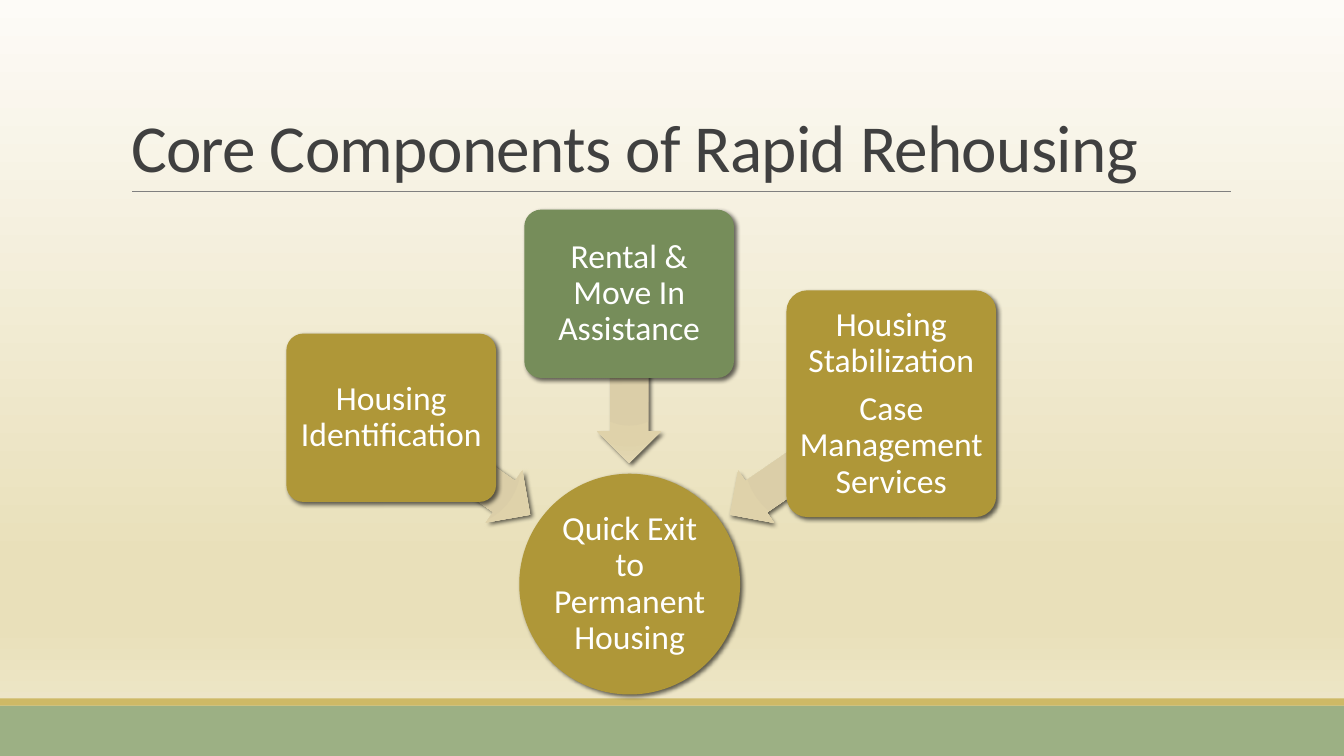
from lxml import etree
from pptx import Presentation
from pptx.dml.color import RGBColor
from pptx.enum.shapes import MSO_CONNECTOR, MSO_SHAPE
from pptx.enum.text import MSO_ANCHOR, MSO_AUTO_SIZE, PP_ALIGN
from pptx.oxml import parse_xml
from pptx.oxml.ns import nsdecls, qn
from pptx.util import Pt

PX = 9144  # 100 px to the inch
GOLD = RGBColor(0xAF, 0x97, 0x38)
GREEN = RGBColor(0x76, 0x8D, 0x5A)
SAGE = RGBColor(0x9C, 0xB0, 0x84)
YELLOW = RGBColor(0xCE, 0xB9, 0x66)
GREY = RGBColor(0x80, 0x80, 0x80)
DARK = RGBColor(0x40, 0x40, 0x40)
WHITE = RGBColor(0xFF, 0xFF, 0xFF)
PAGE_STOPS = [(0, "FDFBF7"), (74, "E9E0BA"), (83, "E9E0BA"), (100, "F0EAD1")]
ARROW_STOPS = [(0, "DACDA6"), (34, "DBCEA8"), (70, "DFD2AA"), (100, "E5DAB6")]
LINEAR = '<a:lin ang="5400000" scaled="0"/>'
RADIAL = ('<a:path path="circle"><a:fillToRect l="100000" t="100000" '
          'r="100000" b="100000"/></a:path>')


def set_gradient(fill, parent, stops, direction):
    fill.gradient()
    old = parent.find(".//" + qn("a:gradFill"))
    marks = "".join(f'<a:gs pos="{place * 1000}"><a:srgbClr val="{color}"/></a:gs>'
                    for place, color in stops)
    old.getparent().replace(old, parse_xml(
        f'<a:gradFill {nsdecls("a")} rotWithShape="1"><a:gsLst>{marks}</a:gsLst>'
        f'{direction}</a:gradFill>'))


def add_block(kind, bounds, color=None, shadow=True):
    block = page.shapes.add_shape(kind, *(n * PX for n in bounds))
    block.shadow.inherit = False
    block.line.fill.background()
    if color is not None:
        block.fill.solid()
        block.fill.fore_color.rgb = color
    else:
        set_gradient(block.fill, block._element.spPr, ARROW_STOPS, RADIAL)
    if shadow:
        effects = block._element.spPr.find(qn("a:effectLst"))
        effects.append(parse_xml(
            f'<a:outerShdw {nsdecls("a")} blurRad="38100" dist="25400" dir="2700000" '
            'rotWithShape="0"><a:srgbClr val="000000"><a:alpha val="60000"/>'
            '</a:srgbClr></a:outerShdw>'))
    return block


deck = Presentation()
deck.slide_width, deck.slide_height = 1333 * PX, 750 * PX
page = deck.slides.add_slide(deck.slide_layouts[5])

# Background, bottom bands and title rule
set_gradient(page.background.fill, page._element, PAGE_STOPS, LINEAR)
add_block(MSO_SHAPE.RECTANGLE, (0, 700, 1333, 50), SAGE, shadow=False)
add_block(MSO_SHAPE.RECTANGLE, (0, 693, 1333, 7), YELLOW, shadow=False)
rule = page.shapes.add_connector(MSO_CONNECTOR.STRAIGHT,
                                 131 * PX, 190 * PX, 1221 * PX, 190 * PX)
rule.line.color.rgb = GREY
rule.line.width = Pt(0.5)
etree.SubElement(rule._element.spPr, qn("a:effectLst"))

# Title
title = page.shapes.title
title.left, title.top, title.width, title.height = (n * PX for n in (120, 31, 1100, 159))
title.text_frame.auto_size = MSO_AUTO_SIZE.NONE
title.text_frame.vertical_anchor = MSO_ANCHOR.BOTTOM
para = title.text_frame.paragraphs[0]
para.alignment = PP_ALIGN.LEFT
para.line_spacing = 0.85
span = para.add_run()
span.text = "Core Components of Rapid Rehousing"
span.font.name = "Calibri"
span.font.size = Pt(48)
span.font.color.rgb = DARK
span.font._element.set("spc", "-50")

# Components: shape, bounds, colour, inset, paragraphs, arrow bounds, arrow rotation
ROUND = MSO_SHAPE.ROUNDED_RECTANGLE
COMPONENTS = [
    (MSO_SHAPE.OVAL, (515, 470, 219, 219), GOLD, 2,
     ["Quick Exit to Permanent Housing"], None, 0),
    (ROUND, (284, 331, 208, 167), GOLD, 5,
     ["Housing Identification"], (373, 431, 168, 63), 215),
    (ROUND, (520, 208, 208, 167), GREEN, 5,
     ["Rental & Move In Assistance"], (540, 344, 168, 63), 270),
    (ROUND, (780, 288, 208, 225), GOLD, 5,
     ["Housing Stabilization", "Case Management Services"], (707, 424, 195, 63), 325.5),
]
for kind, bounds, color, inset, texts, arrow_bounds, rotation in COMPONENTS:
    if arrow_bounds:
        arrow = add_block(MSO_SHAPE.LEFT_ARROW, arrow_bounds)
        arrow.rotation = rotation
        arrow.adjustments[0], arrow.adjustments[1] = 0.6, 0.5
    box = add_block(kind, bounds, color)
    if kind == ROUND:
        box.adjustments[0] = 0.1
    frame = box.text_frame
    frame.word_wrap = True
    frame.vertical_anchor = MSO_ANCHOR.MIDDLE
    for side in ("left", "top", "right", "bottom"):
        setattr(frame, f"margin_{side}", inset * PX)
    for index, text in enumerate(texts):
        para = frame.add_paragraph() if index else frame.paragraphs[0]
        para.alignment = PP_ALIGN.CENTER
        para.line_spacing = 0.9
        para.space_before = Pt(8.4 if index else 0)
        span = para.add_run()
        span.text = text
        for name, value in {"name": "Calibri", "size": Pt(24)}.items():
            setattr(span.font, name, value)
        span.font.color.rgb = WHITE

deck.save("out.pptx")
